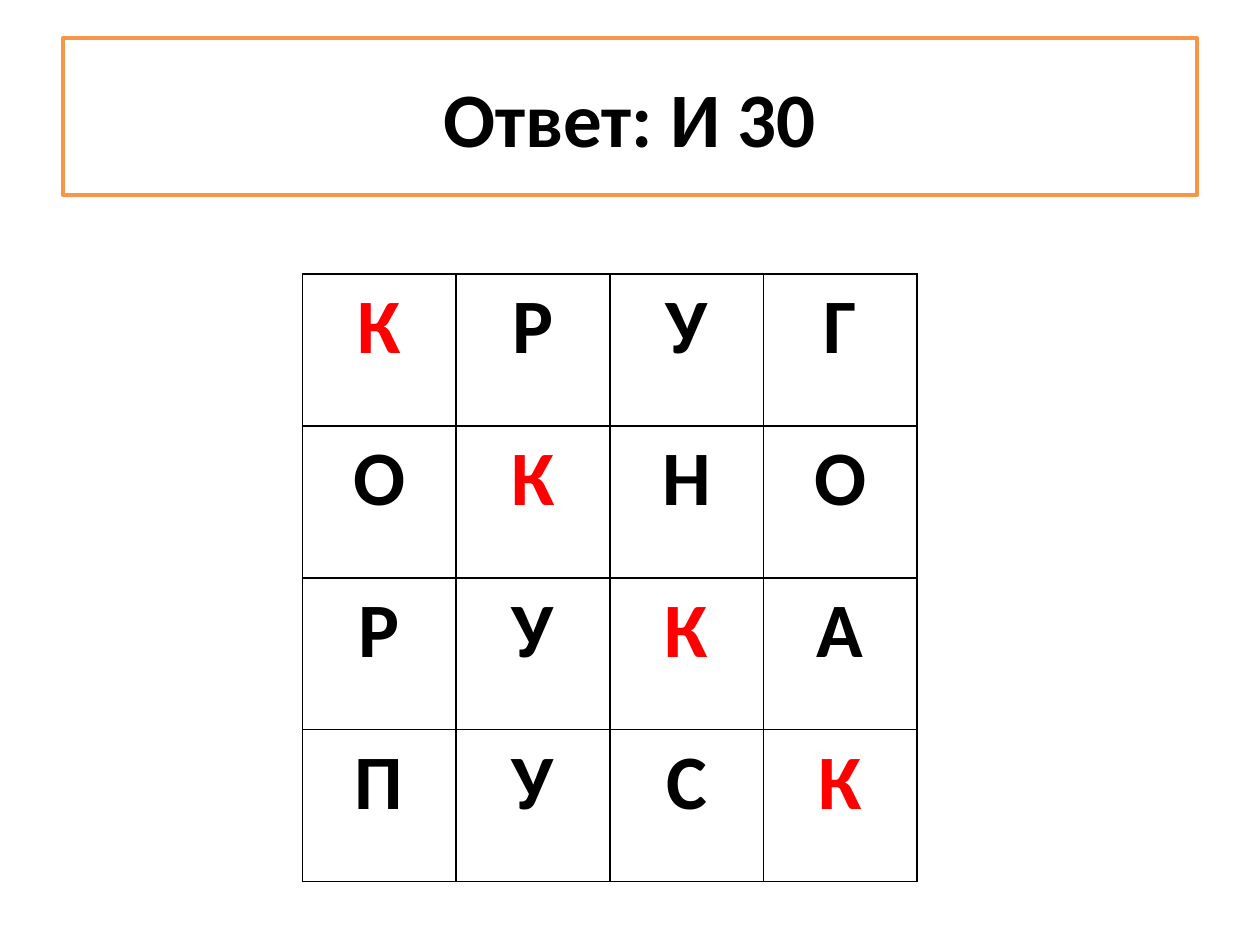
from dataclasses import dataclass

from lxml import etree
from pptx import Presentation
from pptx.dml.color import RGBColor
from pptx.enum.shapes import MSO_SHAPE
from pptx.enum.text import MSO_ANCHOR, PP_ALIGN
from pptx.oxml.ns import qn
from pptx.util import Emu, Inches, Pt

RECT = MSO_SHAPE.RECTANGLE
MID, TOP = MSO_ANCHOR.MIDDLE, MSO_ANCHOR.TOP
CENTER = PP_ALIGN.CENTER

COLORS = {"paper": "FFFFFF", "ink": "000000", "key": "FF0000", "frame": "F79646"}
WIDE, HIGH = Inches(10), Inches(7.5)
WORDS = ("КРУГ", "ОКНО", "РУКА", "ПУСК")


@dataclass
class Box:
    """A place on the slide, in shares of its width and height."""
    x: float
    y: float
    w: float
    h: float

    def rect(self) -> tuple:
        return (Emu(int(self.x * WIDE)), Emu(int(self.y * HIGH)),
                Emu(int(self.w * WIDE)), Emu(int(self.h * HIGH)))


TITLE = Box(0.05, 0.04, 0.9, 1 / 6)
GRID = Box(0.24, 0.29, 0.488, 0.643)


def color(name: str) -> RGBColor:
    return RGBColor.from_string(COLORS[name])


def write(frame, text: str, *, tone: str = "ink", size: int = 44,
          bold: bool = True, align=CENTER) -> None:
    para = frame.paragraphs[0]
    para.alignment = align
    run = para.add_run()
    run.text = text
    font = run.font
    font.name, font.size, font.bold = "Calibri", Pt(size), bold
    font.color.rgb = color(tone)


def border(cell, tone: str = "ink", width: float = 1) -> None:
    props = cell._tc.get_or_add_tcPr()
    for side in ("lnL", "lnR", "lnT", "lnB"):
        line = etree.SubElement(props, qn(f"a:{side}"), w=str(Pt(width)))
        fill = etree.SubElement(line, qn("a:solidFill"))
        etree.SubElement(fill, qn("a:srgbClr"), val=COLORS[tone])


def draw_title(slide, box: Box, text: str) -> None:
    shape = slide.shapes.add_shape(RECT, *box.rect())
    shape.shadow.inherit = False
    shape.fill.solid()
    shape.fill.fore_color.rgb = color("paper")
    shape.line.color.rgb = color("frame")
    shape.line.width = Pt(2)
    frame = shape.text_frame
    frame.word_wrap = True
    frame.vertical_anchor = MID
    write(frame, text)


def draw_grid(slide, box: Box, words: tuple) -> None:
    table = slide.shapes.add_table(len(words), len(words[0]), *box.rect()).table
    table.first_row = table.horz_banding = False
    for row, word in enumerate(words):
        for col, letter in enumerate(word):
            cell = table.cell(row, col)
            border(cell)
            cell.fill.background()
            cell.vertical_anchor = TOP
            # The shared letter runs down the diagonal
            write(cell.text_frame, letter, tone="key" if row == col else "ink")


def main() -> None:
    deck = Presentation()
    deck.slide_width, deck.slide_height = WIDE, HIGH
    slide = deck.slides.add_slide(deck.slide_layouts[6])
    draw_title(slide, TITLE, "Ответ: И 30")
    draw_grid(slide, GRID, WORDS)
    deck.save("out.pptx")


if __name__ == "__main__":
    main()
